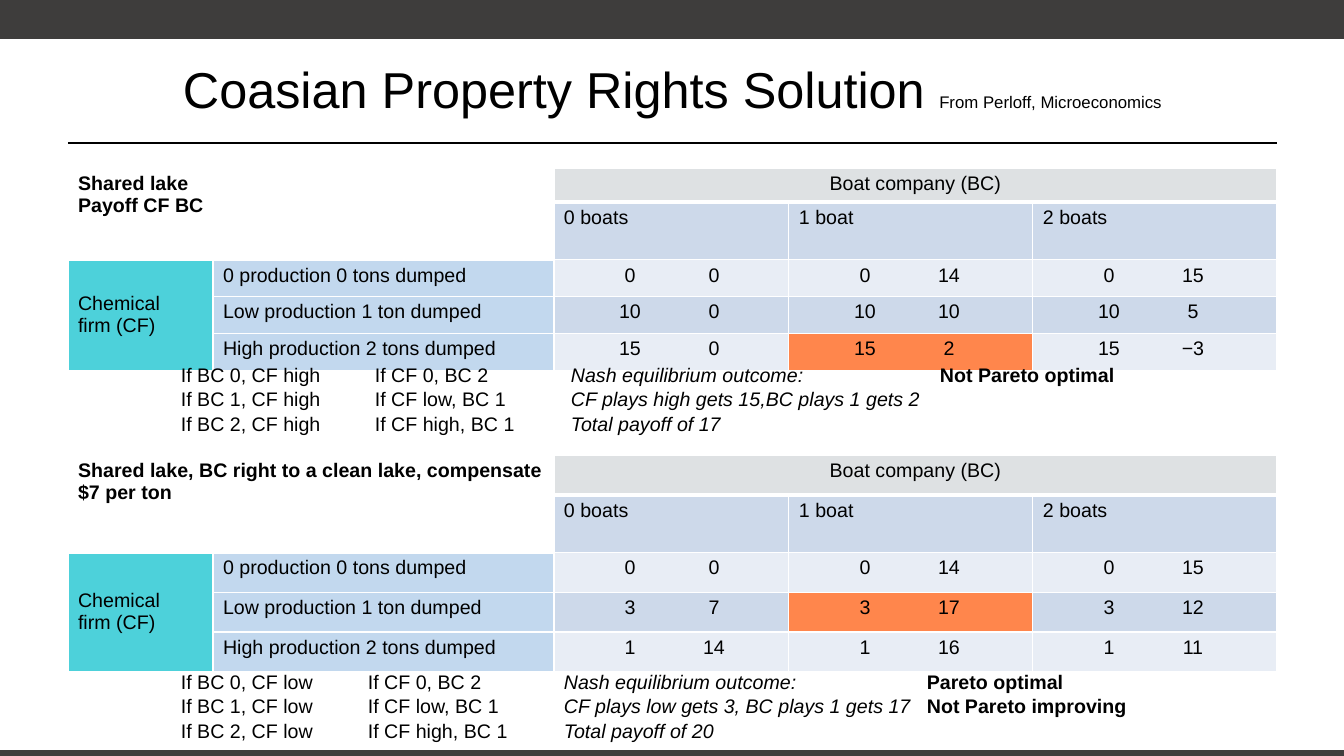
"""Builds the Coasian property rights slide with its two payoff tables."""
from lxml.etree import SubElement
from pptx import Presentation
from pptx.dml.color import RGBColor
from pptx.enum.shapes import MSO_CONNECTOR, MSO_SHAPE
from pptx.enum.text import MSO_ANCHOR as ANCHOR, PP_ALIGN as ALIGN
from pptx.oxml.ns import qn
from pptx.util import Emu, Pt

EMU_PER_PX = 914400 / 100.8
LEFT = 68
COLUMNS = [145, 341, 235, 244, 244]
BOATS = ["0 boats", "1 boat", "2 boats"]
PRODUCTION = ["0 production 0 tons dumped", "Low production 1 ton dumped",
              "High production 2 tons dumped"]
BLACK, WHITE, BAR, NASH = "000000", "FFFFFF", "3E3D3C", "FF864C"
BOAT_HEAD, FIRM, ROW_HEAD = "DEE1E3", "4DD1DA", "C2D8EE"
LIGHT, DARK = "E8EDF5", "CDD9EA"


def px(length):
    return Emu(round(length * EMU_PER_PX))


def color(hex_code):
    return RGBColor.from_string(hex_code)


def style(paragraph, size=14, bold=False):
    font = paragraph.font
    font.name, font.size, font.bold = "Arial", Pt(size), bold
    font.color.rgb = color(BLACK)


def set_tabs(paragraph, stops, align):
    properties = paragraph._p.get_or_add_pPr()
    tabs = SubElement(properties, qn("a:tabLst"))
    for stop in stops:
        SubElement(tabs, qn("a:tab"), pos=str(px(stop)), algn=align)


def add_bar(slide, top, height):
    bar = slide.shapes.add_shape(MSO_SHAPE.RECTANGLE, 0, px(top), px(1344), px(height))
    bar.shadow.inherit = False
    bar.fill.solid()
    bar.fill.fore_color.rgb = color(BAR)
    bar.line.fill.background()


def add_rule(slide, y):
    rule = slide.shapes.add_connector(
        MSO_CONNECTOR.STRAIGHT, px(LEFT), px(y), px(LEFT + sum(COLUMNS)), px(y))
    rule.line.color.rgb = color(BLACK)
    rule.line.width = Pt(1.25)
    SubElement(rule._element.spPr, qn("a:effectLst"))


def add_text_frame(slide, left, top, width, height):
    frame = slide.shapes.add_textbox(px(left), px(top), px(width), px(height)).text_frame
    frame.word_wrap = True
    return frame


def add_title(slide, title, credit):
    frame = add_text_frame(slide, LEFT, 25, 1209, 126)
    frame.vertical_anchor = ANCHOR.MIDDLE
    heading = frame.paragraphs[0]
    heading.alignment = ALIGN.CENTER
    style(heading, 36)
    heading.add_run().text = title + " "
    source = heading.add_run()
    source.text = credit
    source.font.size = Pt(12)


def add_borders(cell, bottom):
    properties = cell._tc.get_or_add_tcPr()
    for side, width in zip("LRTB", (1, 1, 1, bottom)):
        border = SubElement(properties, qn("a:ln" + side), w=str(Pt(width)))
        fill = SubElement(border, qn("a:solidFill"))
        SubElement(fill, qn("a:srgbClr"), val=WHITE)


def fill_cell(cell, text, fill, align=ALIGN.LEFT, bold=False):
    cell.text = text
    cell.fill.solid()
    cell.fill.fore_color.rgb = color(fill)
    for paragraph in cell.text_frame.paragraphs:
        paragraph.alignment = align
        style(paragraph, bold=bold)


def add_payoff_table(slide, top, heights, caption, payoffs, nash):
    table = slide.shapes.add_table(
        5, 5, px(LEFT), px(top), px(sum(COLUMNS)), px(sum(heights))).table
    table.first_row = table.horz_banding = False
    for column, width in zip(table.columns, COLUMNS):
        column.width = px(width)
    for index, (row, height) in enumerate(zip(table.rows, heights)):
        row.height = px(height)
        for cell in row.cells:
            add_borders(cell, 3 if index == 0 else 1)
            fill_cell(cell, "", WHITE)
    for start, end in [((0, 0), (1, 1)), ((0, 2), (0, 4)), ((2, 0), (4, 0))]:
        table.cell(*start).merge(table.cell(*end))

    fill_cell(table.cell(0, 0), caption, WHITE, bold=True)
    fill_cell(table.cell(0, 2), "Boat company (BC)", BOAT_HEAD, ALIGN.CENTER)
    fill_cell(table.cell(2, 0), "Chemical\vfirm (CF)", FIRM)
    table.cell(2, 0).vertical_anchor = ANCHOR.MIDDLE
    for column, boats in enumerate(BOATS, 2):
        fill_cell(table.cell(1, column), boats, DARK)
    for row, (production, outcomes) in enumerate(zip(PRODUCTION, payoffs), 2):
        fill_cell(table.cell(row, 1), production, ROW_HEAD)
        for column, (firm, boat) in enumerate(outcomes, 2):
            band = DARK if row == 3 else LIGHT
            cell = table.cell(row, column)
            fill_cell(cell, f"\t{firm}\t{boat}", NASH if (row, column) == nash else band)
            set_tabs(cell.text_frame.paragraphs[0], [66, 150], "ctr")


def add_notes(slide, top, height, stops, lines):
    frame = add_text_frame(slide, 171, top, 1003, height)
    for index, (replies, outcome, verdict) in enumerate(lines):
        line = frame.add_paragraph() if index else frame.paragraphs[0]
        line.line_spacing = 1.04
        set_tabs(line, stops, "l")
        style(line)
        line.add_run().text = replies + "\t"
        result = line.add_run()
        result.text = outcome
        result.font.italic = True
        if verdict:
            judgement = line.add_run()
            judgement.text = "\t" + verdict
            judgement.font.bold = True


def main():
    deck = Presentation()
    deck.slide_width, deck.slide_height = px(1344), px(756)
    slide = deck.slides.add_slide(deck.slide_layouts[6])
    add_bar(slide, 0, 39)
    add_bar(slide, 750, 6)
    add_rule(slide, 143)
    add_title(slide, "Coasian Property Rights Solution", "From Perloff, Microeconomics")

    add_payoff_table(
        slide, 168, [34, 54, 37, 37, 37], "Shared lake\nPayoff CF BC",
        [[("0", "0"), ("0", "14"), ("0", "15")],
         [("10", "0"), ("10", "10"), ("10", "5")],
         [("15", "0"), ("15", "2"), ("15", "−3")]], (4, 3))
    add_notes(slide, 357, 105, [194, 390, 759], [
        ("If BC 0, CF high\tIf CF 0, BC 2", "Nash equilibrium outcome:", "Not Pareto optimal"),
        ("If BC 1, CF high\tIf CF low, BC 1", "CF plays high gets 15,BC plays 1 gets 2", ""),
        ("If BC 2, CF high\tIf CF high, BC 1", "Total payoff of 17", "")])

    add_payoff_table(
        slide, 455, [40, 54, 40, 40, 40],
        "Shared lake, BC right to a clean lake, compensate $7 per ton",
        [[("0", "0"), ("0", "14"), ("0", "15")],
         [("3", "7"), ("3", "17"), ("3", "12")],
         [("1", "14"), ("1", "16"), ("1", "11")]], (3, 3))
    add_notes(slide, 664, 82, [187, 383, 746], [
        ("If BC 0, CF low\tIf CF 0, BC 2", "Nash equilibrium outcome:", "Pareto optimal"),
        ("If BC 1, CF low\tIf CF low, BC 1", "CF plays low gets 3, BC plays 1 gets 17",
         "Not Pareto improving"),
        ("If BC 2, CF low\tIf CF high, BC 1", "Total payoff of 20", "")])
    deck.save("out.pptx")


if __name__ == "__main__":
    main()
